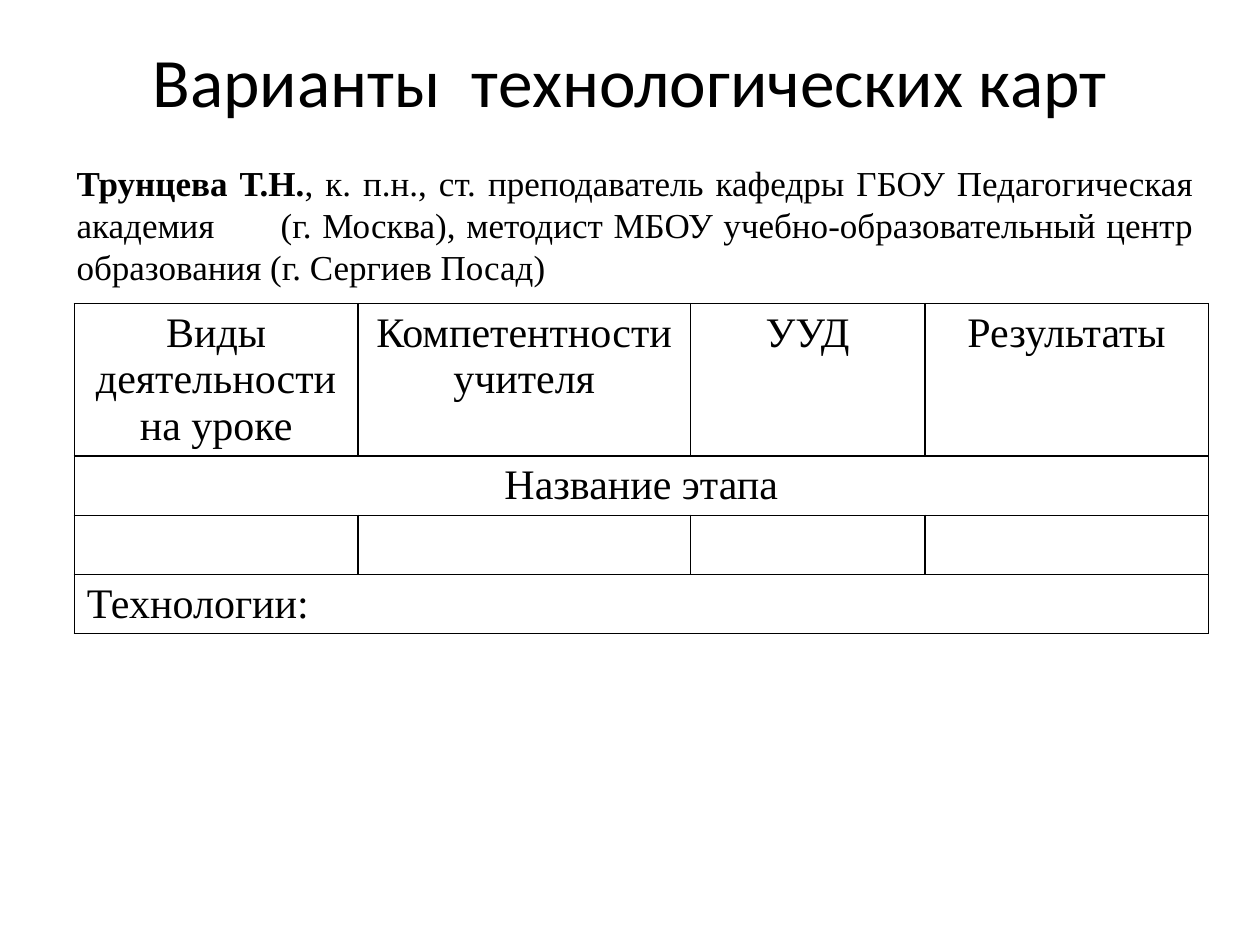
import pptx
import pptx.util
import pptx.dml.color
import pptx.enum.text
import pptx.oxml
import pptx.oxml.ns
from lxml import etree

Inches, Pt = pptx.util.Inches, pptx.util.Pt
ALIGN = pptx.enum.text.PP_ALIGN
ANCHOR = pptx.enum.text.MSO_ANCHOR
A = pptx.oxml.ns.nsdecls("a")

THEME = {
    "ink": "000000",
    "title": ("Calibri", 39.6),
    "author": ("Times New Roman", 20),
    "table": ("Times New Roman", 24),
}


def add_span(para, text, style, bold=False):
    span = para.add_run()
    span.text = text
    span.font.name, size = THEME[style]
    span.font.size = Pt(size)
    span.font.bold = bold
    span.font.color.rgb = pptx.dml.color.RGBColor.from_string(THEME["ink"])


def add_borders(cell):
    properties = cell._tc.get_or_add_tcPr()
    for index, side in enumerate(("lnL", "lnR", "lnT", "lnB")):
        properties.insert(index, pptx.oxml.parse_xml(
            f'<a:{side} {A} w="{Pt(1)}"><a:solidFill>'
            f'<a:srgbClr val="{THEME["ink"]}"/></a:solidFill></a:{side}>'))


deck = pptx.Presentation()
deck.slide_width, deck.slide_height = Inches(10), Inches(7.5)
page = deck.slides.add_slide(deck.slide_layouts[5])
width, height = deck.slide_width, deck.slide_height

# Title
title = page.shapes.title
title.left, title.top = int(width * 0.05), int(height * 0.04)
title.width, title.height = int(width * 0.9), Inches(1.25)
title.text_frame.vertical_anchor = ANCHOR.TOP
title.text_frame.margin_top = 0
para = title.text_frame.paragraphs[0]
para.alignment = ALIGN.CENTER
add_span(para, "Варианты  технологических карт", "title")

# Table grid: four columns, a tall header and three equal rows
columns = [2.25, 2.64, 1.86, 2.25]
rows = [1.21, 0.47, 0.47, 0.47]
frame = page.shapes.add_table(len(rows), len(columns), Inches(0.59), Inches(2.41),
                              Inches(sum(columns)), Inches(sum(rows)))
table = frame.table
table.first_row = table.horz_banding = False
for column, size in zip(table.columns, columns):
    column.width = Inches(size)
for row, size in zip(table.rows, rows):
    row.height = Inches(size)
for cell in table.iter_cells():
    cell.fill.background()
    add_borders(cell)

# Table text: header cells, then the two full-width rows
headings = ["Виды деятельности на уроке", "Компетентности учителя", "УУД", "Результаты"]
entries = [(0, column, text, ALIGN.CENTER) for column, text in enumerate(headings)]
entries += [(1, 0, "Название этапа", ALIGN.CENTER), (3, 0, "Технологии:", ALIGN.LEFT)]
for row in (1, 3):
    table.cell(row, 0).merge(table.cell(row, len(columns) - 1))
for row, column, text, alignment in entries:
    para = table.cell(row, column).text_frame.paragraphs[0]
    para.alignment = alignment
    add_span(para, text, "table")

# Author, with a tab stop before the city
box = page.shapes.add_textbox(Inches(0.51), Inches(1.23), Inches(9.06), Inches(1.11))
box.text_frame.word_wrap = True
para = box.text_frame.paragraphs[0]
para.alignment = ALIGN.JUSTIFY
tabs = etree.SubElement(para._p.get_or_add_pPr(), pptx.oxml.ns.qn("a:tabLst"))
etree.SubElement(tabs, pptx.oxml.ns.qn("a:tab"), pos=str(Inches(1.62)), algn="l")
add_span(para, "Трунцева Т.Н.", "author", bold=True)
add_span(para, ", к. п.н., ст. преподаватель кафедры ГБОУ Педагогическая академия\t"
               "(г. Москва), методист МБОУ учебно-образовательный центр образования "
               "(г. Сергиев Посад)", "author")

deck.save("out.pptx")
